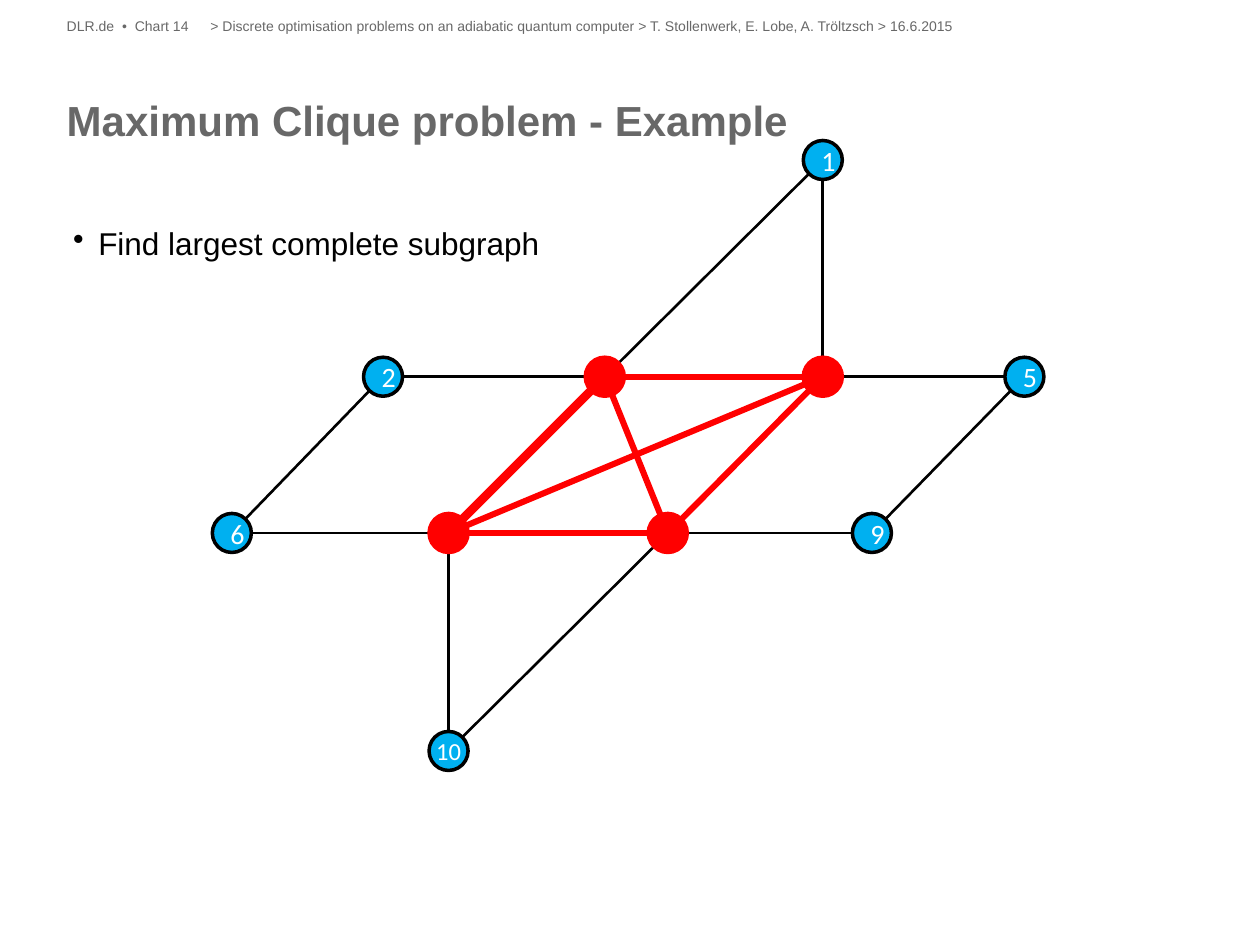
from math import hypot

from lxml import etree
from pptx import Presentation
from pptx.dml.color import RGBColor
from pptx.enum.shapes import MSO_CONNECTOR, MSO_SHAPE
from pptx.enum.text import MSO_ANCHOR, PP_ALIGN
from pptx.oxml.ns import qn
from pptx.util import Inches, Pt

OVAL, STRAIGHT = MSO_SHAPE.OVAL, MSO_CONNECTOR.STRAIGHT
MIDDLE, CENTER = MSO_ANCHOR.MIDDLE, PP_ALIGN.CENTER

THEME = {
    "font": "Arial", "node_font": "Calibri",
    "grey": "686868", "black": "000000", "white": "FFFFFF",
    "node": "00B0F0", "clique": "FF0000",
    "header_size": 8, "title_size": 24, "body_size": 18,
    "digit_size": 16, "two_digit_size": 14,
    "edge_width": 1.5, "clique_width": 3.5, "heavy_width": 5, "outline_width": 2,
}

# Content: text as (words, box, size, colour, bold, line spacing)
TEXTS = [
    ("DLR.de  •  Chart 14", (0.53, 0.14, 1.14, 0.16), "header_size", "grey", False, 1),
    ("> Discrete optimisation problems on an adiabatic quantum computer > "
     "T. Stollenwerk, E. Lobe, A. Tröltzsch > 16.6.2015",
     (1.67, 0.14, 7.8, 0.16), "header_size", "grey", False, 1),
    ("Maximum Clique problem - Example", (0.53, 0.71, 8.94, 0.81),
     "title_size", "grey", True, 1.1),
]
BULLET = ("Find largest complete subgraph", (0.58, 1.75, 3.85, 0.38),
          "body_size", "black", False, 1.1)

# Content: graph, node number -> centre
NODES = {
    1: (6.53, 1.27),
    2: (3.04, 2.99), 3: (4.8, 2.99), 4: (6.53, 2.99), 5: (8.13, 2.99),
    6: (1.84, 4.23), 7: (3.56, 4.23), 8: (5.3, 4.23), 9: (6.92, 4.23),
    10: (3.56, 5.96),
}
EDGES = [(6, 2), (2, 3), (6, 7), (7, 10), (3, 1), (1, 4), (4, 5),
         (8, 9), (10, 8), (9, 5)]
CLIQUE = (3, 4, 7, 8)
CLIQUE_EDGES = [(7, 4), (3, 8), (8, 4), (7, 8), (3, 4)]
HEAVY_EDGE = (7, 3)
DIAMETER = 0.31


def color(name):
    return RGBColor.from_string(THEME[name])


def add_text(slide, words, box, size, tint, bold, spacing, bullet=False):
    frame = slide.shapes.add_textbox(*map(Inches, box)).text_frame
    frame.word_wrap = True
    frame.margin_left = frame.margin_right = frame.margin_top = frame.margin_bottom = 0
    frame.text = words
    paragraph = frame.paragraphs[0]
    paragraph.line_spacing = spacing
    if bullet:
        properties = paragraph._p.get_or_add_pPr()
        properties.set("marL", str(Inches(0.2)))
        properties.set("indent", str(Inches(-0.2)))
        etree.SubElement(properties, qn("a:buChar")).set("char", "•")
    font = paragraph.runs[0].font
    font.name, font.size, font.bold = THEME["font"], Pt(THEME[size]), bold
    font.color.rgb = color(tint)


def add_edge(slide, start, end, tint, width):
    """Join two nodes from rim to rim."""
    (x1, y1), (x2, y2) = NODES[start], NODES[end]
    trim = DIAMETER / 2 / hypot(x2 - x1, y2 - y1)
    dx, dy = (x2 - x1) * trim, (y2 - y1) * trim
    edge = slide.shapes.add_connector(
        STRAIGHT, *map(Inches, (x1 + dx, y1 + dy, x2 - dx, y2 - dy)))
    edge.line.color.rgb = color(tint)
    edge.line.width = Pt(THEME[width])
    etree.SubElement(edge._element.spPr, qn("a:effectLst"))


def add_node(slide, number):
    x, y = NODES[number]
    in_clique = number in CLIQUE
    node = slide.shapes.add_shape(
        OVAL, Inches(x - DIAMETER / 2), Inches(y - DIAMETER / 2),
        Inches(DIAMETER), Inches(DIAMETER))
    node.shadow.inherit = False
    node.fill.solid()
    node.fill.fore_color.rgb = color("clique" if in_clique else "node")
    node.line.color.rgb = color("clique" if in_clique else "black")
    node.line.width = Pt(THEME["outline_width"])
    if in_clique:
        return
    frame = node.text_frame
    frame.text = str(number)
    frame.word_wrap = number < 10
    frame.vertical_anchor = MIDDLE
    paragraph = frame.paragraphs[0]
    paragraph.alignment = CENTER
    font = paragraph.runs[0].font
    font.name = THEME["node_font"]
    font.size = Pt(THEME["digit_size" if number < 10 else "two_digit_size"])
    font.color.rgb = color("white")


def main():
    deck = Presentation()
    deck.slide_width, deck.slide_height = Inches(10), Inches(7.5)
    slide = deck.slides.add_slide(deck.slide_layouts[6])

    # Header, title and bullet
    for text in TEXTS:
        add_text(slide, *text)
    add_text(slide, *BULLET, bullet=True)

    # Graph: plain edges, nodes, then the clique's edges on top
    for edge in EDGES:
        add_edge(slide, *edge, "black", "edge_width")
    for number in NODES:
        add_node(slide, number)
    for edge in CLIQUE_EDGES:
        add_edge(slide, *edge, "clique", "clique_width")
    add_edge(slide, *HEAVY_EDGE, "clique", "heavy_width")

    deck.save("out.pptx")


if __name__ == "__main__":
    main()
